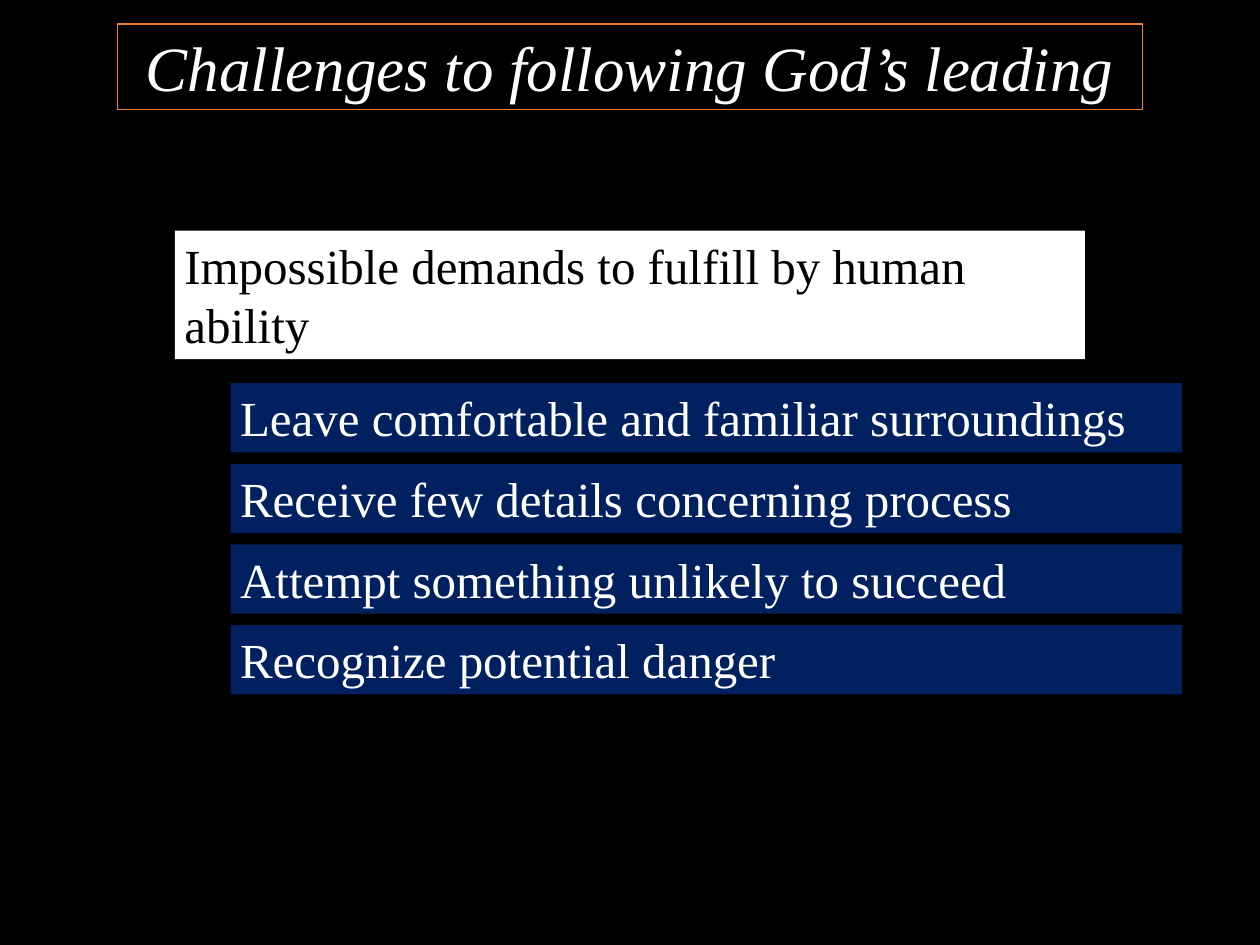
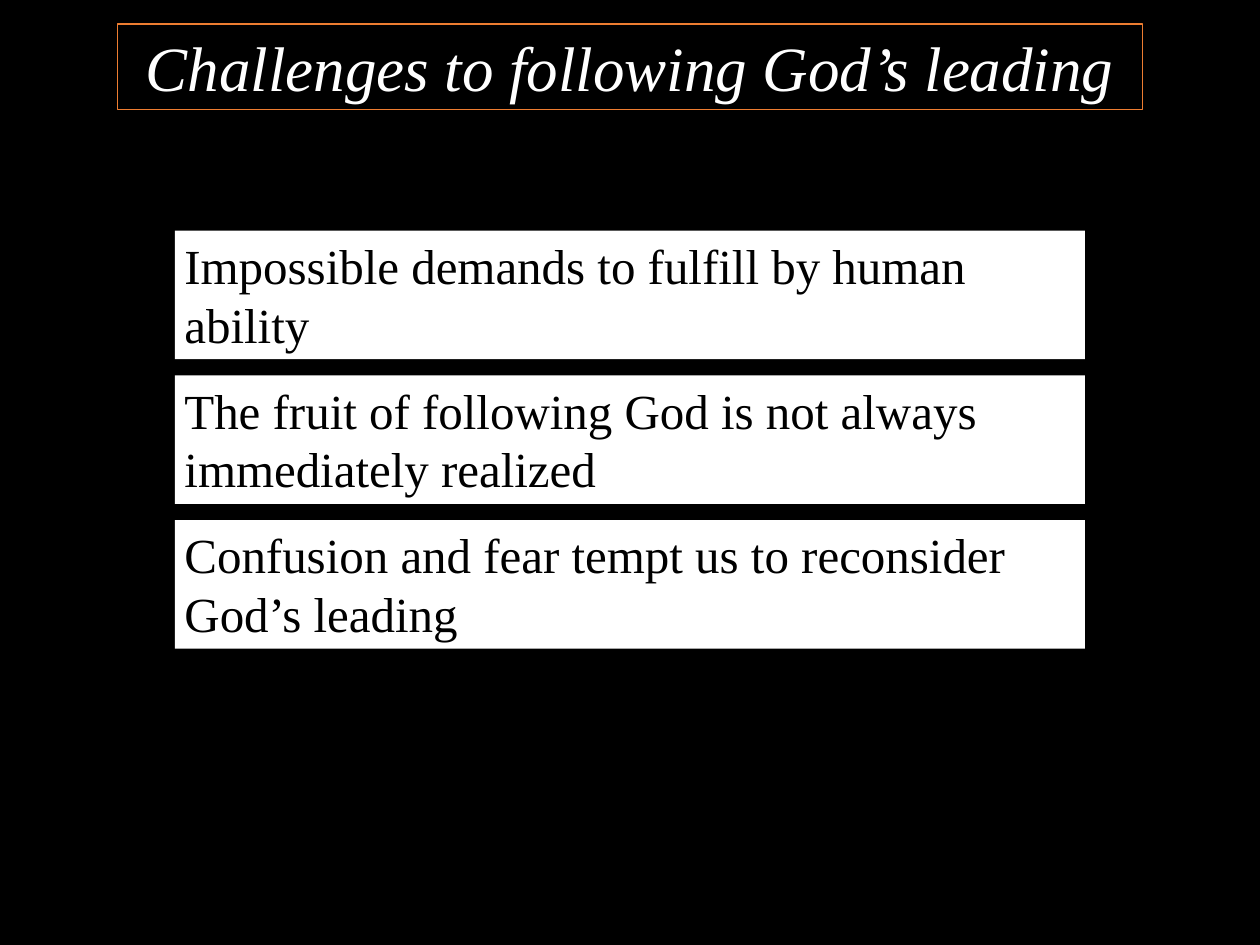
from pptx import Presentation
from pptx.dml.color import RGBColor
from pptx.enum.shapes import MSO_SHAPE as Preset
from pptx.enum.text import MSO_ANCHOR as Anchor, MSO_AUTO_SIZE as AutoSize, PP_ALIGN as Align
from pptx.util import Pt

BLACK = RGBColor(0x00, 0x00, 0x00)
WHITE = RGBColor(0xFF, 0xFF, 0xFF)
NAVY = RGBColor(0x00, 0x20, 0x60)
ORANGE = RGBColor(0xED, 0x7D, 0x31)

FONT = "Times New Roman"
FRAME_FORMAT = {
    "margin_left": Pt(5.4), "margin_right": Pt(5.4),
    "margin_top": Pt(2.7), "margin_bottom": Pt(2.7),
    "word_wrap": True, "vertical_anchor": Anchor.TOP,
    "auto_size": AutoSize.SHAPE_TO_FIT_TEXT,
}

# Boxes are (left, top, width, height) in points
TITLE_BOX = (67, 13.7, 586, 49)
CHALLENGE_BOX = (100, 131.8, 520, 73.4)
EXAMPLE_BOX = (131.8, 218.9, 543.6, 39.6)
CHALLENGE_PITCH = 82.7
EXAMPLE_PITCH = 46.1

TITLE = "Challenges to following God’s leading"
CHALLENGES = [
    "Impossible demands to fulfill by human ability",
    "The fruit of following God is not always immediately realized",
    "Confusion and fear tempt us to reconsider God’s leading",
]
EXAMPLES = [
    "Leave comfortable and familiar surroundings",
    "Receive few details concerning process",
    "Attempt something unlikely to succeed",
    "Recognize potential danger",
]


def add_panel(page, box, text, fill, color, size=28, italic=False,
              align=Align.LEFT, outline=None):
    panel = page.shapes.add_shape(Preset.RECTANGLE, *map(Pt, box))
    panel.shadow.inherit = False
    panel.fill.solid()
    panel.fill.fore_color.rgb = fill
    if outline is None:
        panel.line.fill.background()
    else:
        panel.line.color.rgb = outline
        panel.line.width = Pt(0.75)

    frame = panel.text_frame
    for name, value in FRAME_FORMAT.items():
        setattr(frame, name, value)
    para = frame.paragraphs[0]
    para.alignment = align
    span = para.add_run()
    span.text = text
    span.font.color.rgb = color
    for name, value in {"name": FONT, "size": Pt(size), "italic": italic}.items():
        setattr(span.font, name, value)


def add_stack(page, first_box, pitch, texts, fill, color):
    """Stack one panel per text downwards from first_box."""
    left, top, width, height = first_box
    for row, text in enumerate(texts):
        add_panel(page, (left, top + row * pitch, width, height), text, fill, color)


def add_page(deck, challenges, examples=()):
    page = deck.slides.add_slide(deck.slide_layouts[6])
    page.background.fill.solid()
    page.background.fill.fore_color.rgb = BLACK
    add_panel(page, TITLE_BOX, TITLE, BLACK, WHITE, size=36, italic=True,
              align=Align.CENTER, outline=ORANGE)
    add_stack(page, CHALLENGE_BOX, CHALLENGE_PITCH, challenges, WHITE, BLACK)
    add_stack(page, EXAMPLE_BOX, EXAMPLE_PITCH, examples, NAVY, WHITE)


def main():
    deck = Presentation()
    deck.slide_width, deck.slide_height = Pt(720), Pt(540)
    add_page(deck, CHALLENGES[:1], EXAMPLES)
    add_page(deck, CHALLENGES)
    deck.save("out.pptx")


if __name__ == "__main__":
    main()
